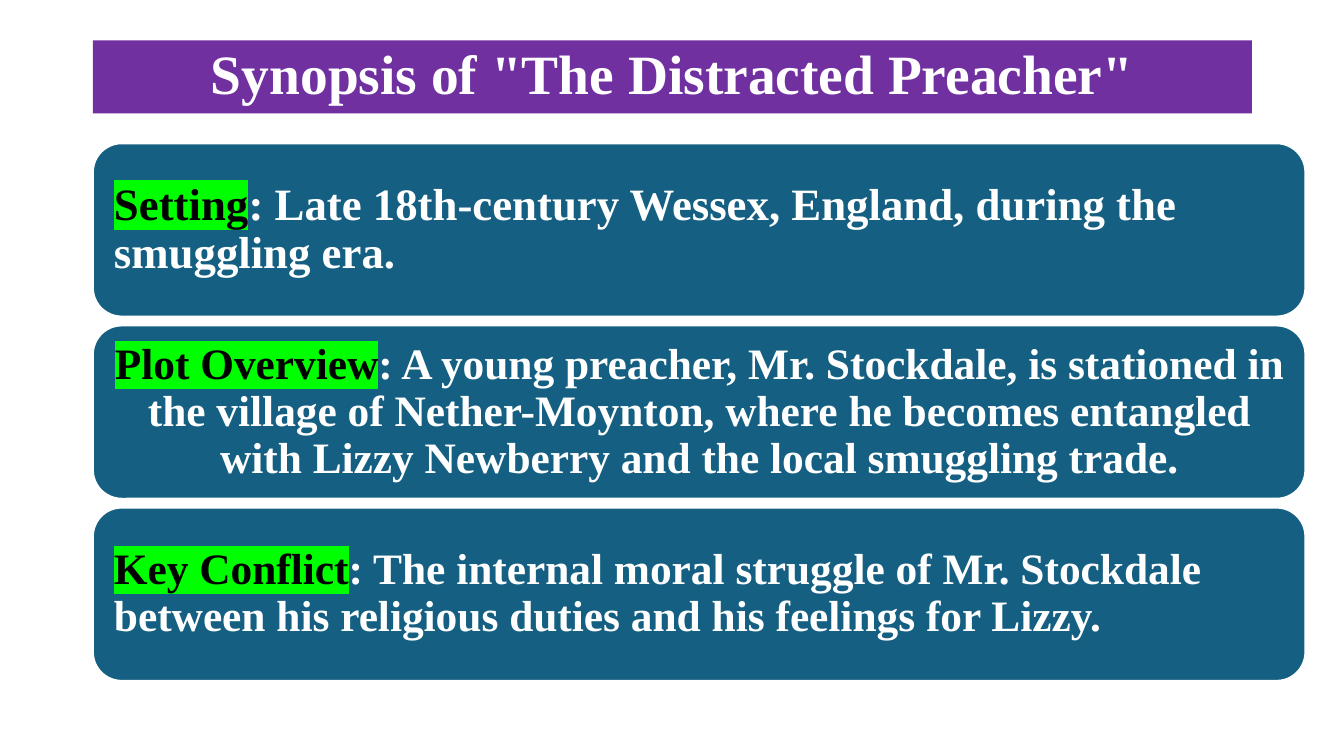
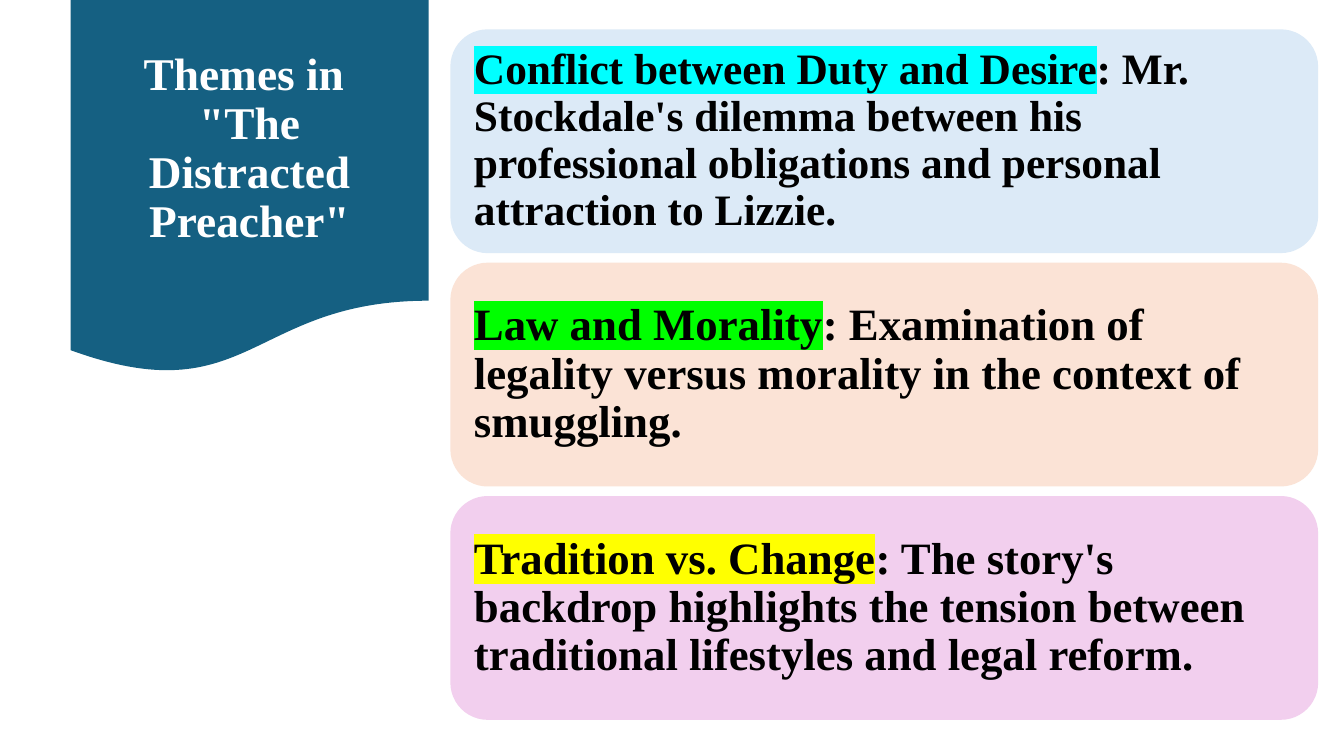
from lxml.etree import SubElement
from pptx import Presentation
from pptx.dml.color import RGBColor
from pptx.enum.shapes import MSO_SHAPE
from pptx.enum.text import MSO_ANCHOR, PP_ALIGN
from pptx.oxml.ns import qn
from pptx.util import Cm, Pt

WHITE = RGBColor(0xFF, 0xFF, 0xFF)
BLACK = RGBColor(0x00, 0x00, 0x00)
PURPLE = RGBColor(0x70, 0x30, 0xA0)
TEAL = RGBColor(0x15, 0x60, 0x82)
PALE_BLUE = RGBColor(0xDC, 0xEA, 0xF7)
PALE_ORANGE = RGBColor(0xFB, 0xE3, 0xD6)
PALE_PINK = RGBColor(0xF2, 0xCF, 0xEE)
GREEN = RGBColor(0x00, 0xFF, 0x00)
CYAN = RGBColor(0x00, 0xFF, 0xFF)
YELLOW = RGBColor(0xFF, 0xFF, 0x00)
FONT = "Times New Roman"
LEFT, CENTER = PP_ALIGN.LEFT, PP_ALIGN.CENTER


def style_text(box, size, color, align):
    box.text_frame.word_wrap = True
    box.text_frame.vertical_anchor = MSO_ANCHOR.MIDDLE
    para = box.text_frame.paragraphs[0]
    para.alignment = align
    para.line_spacing = 0.9
    para.font.name = FONT
    para.font.size = Pt(size)
    para.font.bold = True
    para.font.color.rgb = color
    return para


def add_card(page, left, top, width, height, fill, color, card):
    label, body, highlight, size, align = card
    box = page.shapes.add_shape(MSO_SHAPE.ROUNDED_RECTANGLE, left, top, width, height)
    box.shadow.inherit = False
    box.fill.solid()
    box.fill.fore_color.rgb = fill
    box.line.fill.background()
    frame = box.text_frame
    frame.margin_left = frame.margin_right = Cm(0.32)
    frame.margin_top = frame.margin_bottom = Cm(0.16)
    para = style_text(box, size, color, align)
    span = para.add_run()
    span.text = label
    span.font.color.rgb = BLACK
    mark = SubElement(span.font._element, qn("a:highlight"))
    SubElement(mark, qn("a:srgbClr")).set("val", str(highlight))
    span = para.add_run()
    span.text = ": " + body
    span.font.color.rgb = color
    return box


deck = Presentation()
deck.slide_width = Cm(33.87)
deck.slide_height = Cm(19.05)
blank = deck.slide_layouts[6]

page = deck.slides.add_slide(blank)
title = page.shapes.add_textbox(Cm(2.34), Cm(1.02), Cm(29.21), Cm(1.84))
title.fill.solid()
title.fill.fore_color.rgb = PURPLE
style_text(title, 39.6, WHITE, CENTER).text = 'Synopsis of "The Distracted Preacher"'

synopsis = [
    ("Setting", "Late 18th-century Wessex, England, during the smuggling era.",
     GREEN, 32, LEFT),
    ("Plot Overview", "A young preacher, Mr. Stockdale, is stationed in the village of "
     "Nether-Moynton, where he becomes entangled with Lizzy Newberry and the local "
     "smuggling trade.", GREEN, 31, CENTER),
    ("Key Conflict", "The internal moral struggle of Mr. Stockdale between his religious "
     "duties and his feelings for Lizzy.", GREEN, 31, LEFT),
]
for row, card in enumerate(synopsis):
    box = add_card(page, Cm(2.34), Cm(3.61 + 4.59 * row), Cm(30.56), Cm(4.37),
                   TEAL, WHITE, card)
    box.line.color.rgb = WHITE
    box.line.width = Pt(1.5)

page = deck.slides.add_slide(blank)
banner = page.shapes.add_shape(MSO_SHAPE.FLOWCHART_DOCUMENT, Cm(1.78), 0, Cm(9.02), Cm(9.45))
banner.shadow.inherit = False
banner.fill.solid()
banner.fill.fore_color.rgb = TEAL
banner.line.fill.background()
title = page.shapes.add_textbox(Cm(2.34), Cm(0.48), Cm(7.9), Cm(6.58))
style_text(title, 32.4, WHITE, CENTER).text = 'Themes in \v"The Distracted Preacher"'

themes = [
    (PALE_BLUE, ("Conflict between Duty and Desire", "Mr. Stockdale's dilemma between his "
                 "professional obligations and personal attraction to Lizzie.",
                 CYAN, 31, LEFT)),
    (PALE_ORANGE, ("Law and Morality", "Examination of legality versus morality in the "
                   "context of smuggling.", GREEN, 32, LEFT)),
    (PALE_PINK, ("Tradition vs. Change", "The story's backdrop highlights the tension "
                 "between traditional lifestyles and legal reform.", YELLOW, 32, LEFT)),
]
for row, (fill, card) in enumerate(themes):
    add_card(page, Cm(11.35), Cm(0.74 + 5.88 * row), Cm(21.87), Cm(5.64), fill, BLACK, card)

deck.save("out.pptx")
